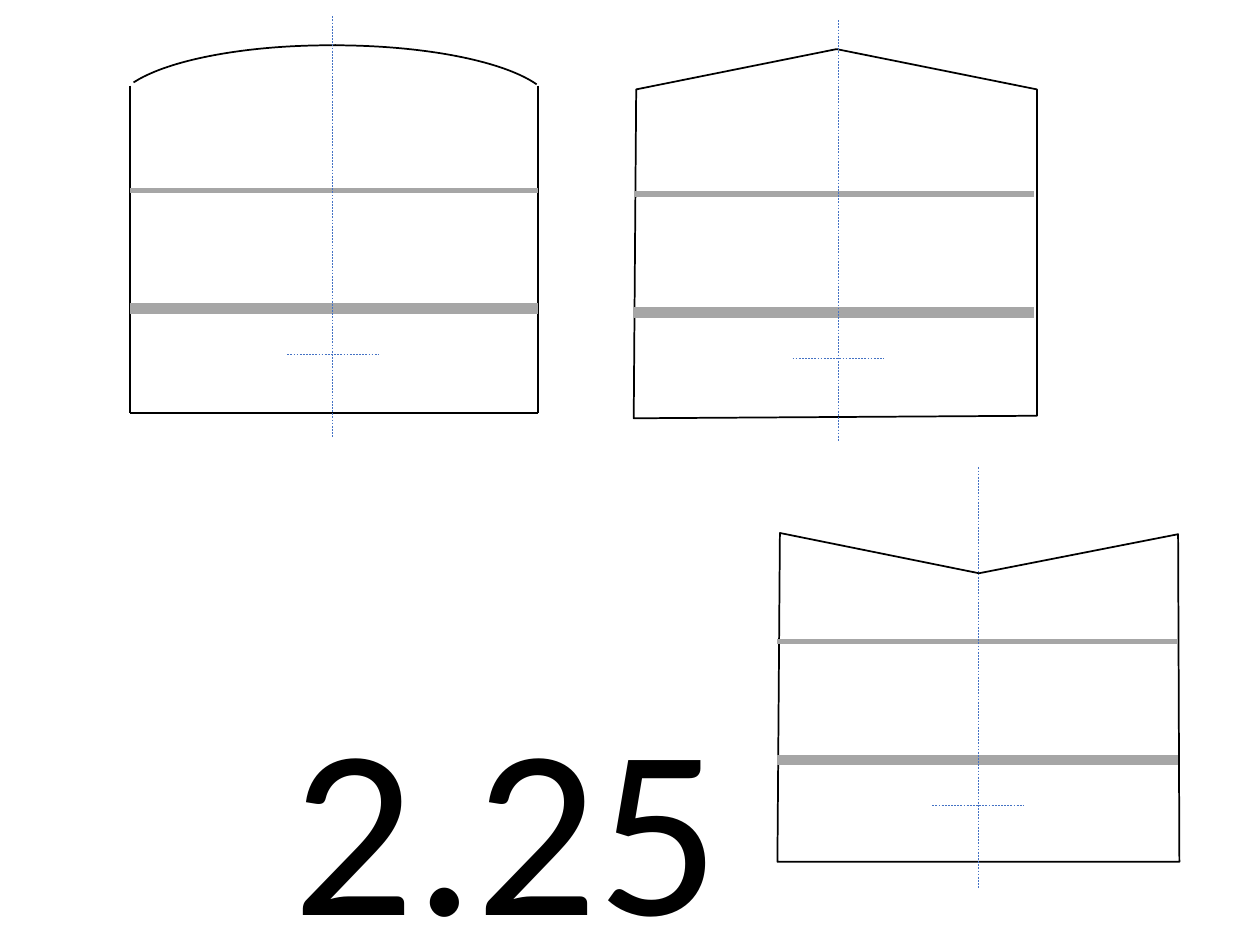
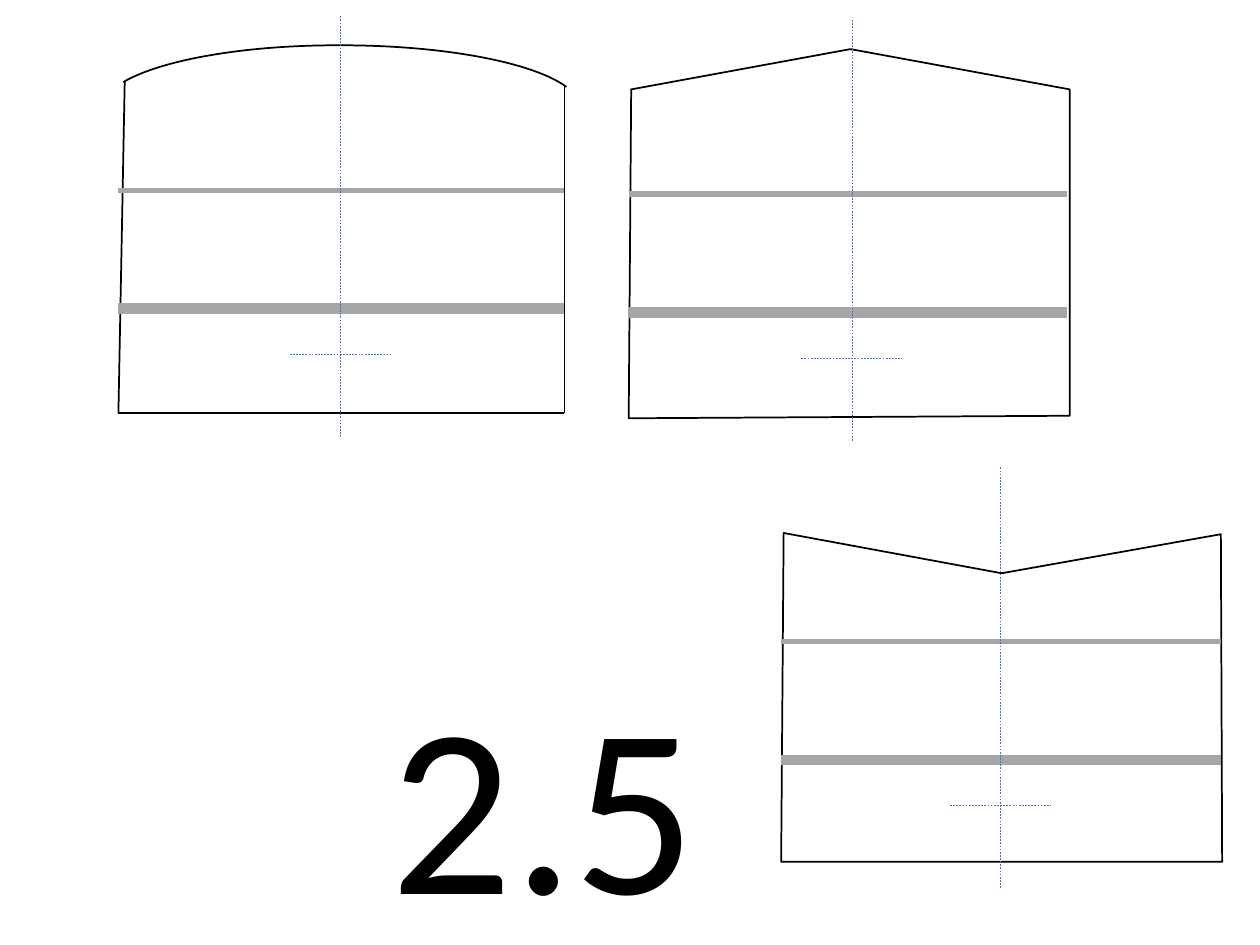
from lxml.etree import SubElement
from pptx import Presentation
from pptx.dml.color import RGBColor
from pptx.enum.dml import MSO_LINE
from pptx.enum.shapes import MSO_CONNECTOR, MSO_SHAPE
from pptx.enum.text import MSO_AUTO_SIZE, PP_ALIGN
from pptx.oxml.ns import qn
from pptx.util import Inches, Pt

BLACK = RGBColor(0x00, 0x00, 0x00)
WHITE = RGBColor(0xFF, 0xFF, 0xFF)
GREY = RGBColor(0xA6, 0xA6, 0xA6)
BLUE = RGBColor(0x44, 0x72, 0xC4)

# Line formats: colour and attributes
WALL = BLACK, {"width": Pt(1)}
THIN = GREY, {"width": Pt(3)}
THICK = GREY, {"width": Pt(6)}
AXIS = BLUE, {"width": Pt(0.25), "dash_style": MSO_LINE.DASH}

FRAME = {"word_wrap": False, "auto_size": MSO_AUTO_SIZE.SHAPE_TO_FIT_TEXT}
FONT = {"name": "Calibri", "size": Pt(138)}

# Each house: left, right and axis x; arcs: left, widths and end angles
SIZES = [
    {
        "label": ("2.25", 2.2, 5.3, 3.64),
        "round": (1.03, 4.27, 2.64),
        "lean": (0, 0.68),
        "arcs": (0.91, (3.48, 211.958), (3.42, 211.505)),
        "gable": (5.03, 8.23, 6.65),
        "valley": (6.17, 9.36, 7.76),
        "half": 0.36,
    },
    {
        "label": ("2.5", 2.99, 5.13, 2.65),
        "round": (0.94, 4.48, 2.7),
        "lean": (0.05, 0.65),
        "arcs": (0.81, (3.8, 212.742), (3.73, 211.805)),
        "gable": (4.99, 8.49, 6.76),
        "valley": (6.2, 9.7, 7.94),
        "half": 0.4,
    },
]


def assign(target, values):
    for name, value in values.items():
        setattr(target, name, value)


def set_line(line, style):
    color, values = style
    line.color.rgb = color
    assign(line, values)


def paint(shape):
    shape.shadow.inherit = False
    shape.fill.solid()
    shape.fill.fore_color.rgb = WHITE
    set_line(shape.line, WALL)


def add_line(group, start, end, style):
    ends = [Inches(v) for v in (*start, *end)]
    link = group.shapes.add_connector(MSO_CONNECTOR.STRAIGHT, *ends)
    set_line(link.line, style)
    SubElement(link._element.spPr, qn("a:effectLst"))


def add_arc(group, left, width, angles, flip=False):
    arc = group.shapes.add_shape(
        MSO_SHAPE.ARC, Inches(left), Inches(0.36), Inches(width), Inches(1))
    for index, angle in enumerate(angles):
        arc.adjustments[index] = angle
    if flip:
        arc._element.spPr.find(qn("a:xfrm")).set("flipH", "1")
    paint(arc)


def add_form(group, points):
    first, *rest = [(Inches(x), Inches(y)) for x, y in points]
    form = group.shapes.build_freeform(*first)
    form.add_line_segments(rest, close=True)
    paint(form.convert_to_shape())


def add_bands(group, left, right, axis, top, half):
    """Two floor bands, the centre axis and its cross mark."""
    for drop, style in ((1.38, THIN), (2.32, THICK)):
        add_line(group, (left, top + drop), (right, top + drop), style)
    add_line(group, (axis, top), (axis, top + 3.34), AXIS)
    mark = top + 2.68
    add_line(group, (axis - half, mark), (axis + half, mark), AXIS)


def add_round(slide, size):
    group = slide.shapes.add_group_shape()
    left, right, axis = size["round"]
    lean, top = size["lean"]
    edge, (wide, stop), (slim, end) = size["arcs"]
    add_arc(group, edge, wide, (162.377, stop))
    add_arc(group, edge, slim, (158.805, end), flip=True)
    add_line(group, (left + lean, top), (left, 3.28), WALL)
    add_line(group, (right, 0.68), (right, 3.28), WALL)
    add_line(group, (left, 3.28), (right, 3.28), WALL)
    add_bands(group, left, right, axis, 0.13, size["half"])


def add_gable(slide, size):
    group = slide.shapes.add_group_shape()
    left, right, axis = size["gable"]
    add_form(group, [(left, 3.32), (right, 3.3), (right, 0.71),
                     (axis - 0.01, 0.39), (left + 0.02, 0.71)])
    add_bands(group, left, right - 0.02, axis, 0.16, size["half"])


def add_valley(slide, size):
    group = slide.shapes.add_group_shape()
    left, right, axis = size["valley"]
    add_form(group, [(left, 6.84), (left + 0.02, 4.23), (axis + 0.01, 4.55),
                     (right - 0.01, 4.24), (right, 6.84)])
    add_bands(group, left, right - 0.01, axis, 3.71, size["half"])


def add_label(slide, text, left, top, width):
    box = slide.shapes.add_textbox(
        Inches(left), Inches(top), Inches(width), Inches(2.42))
    assign(box.text_frame, FRAME)
    para = box.text_frame.paragraphs[0]
    para.alignment = PP_ALIGN.CENTER
    run = para.add_run()
    run.text = text
    assign(run.font, FONT)
    run.font.color.rgb = BLACK


def main():
    deck = Presentation()
    assign(deck, {"slide_width": Inches(10), "slide_height": Inches(7.5)})
    for size in SIZES:
        slide = deck.slides.add_slide(deck.slide_layouts[6])
        add_round(slide, size)
        add_label(slide, *size["label"])
        add_gable(slide, size)
        add_valley(slide, size)
    deck.save("out.pptx")


if __name__ == "__main__":
    main()
